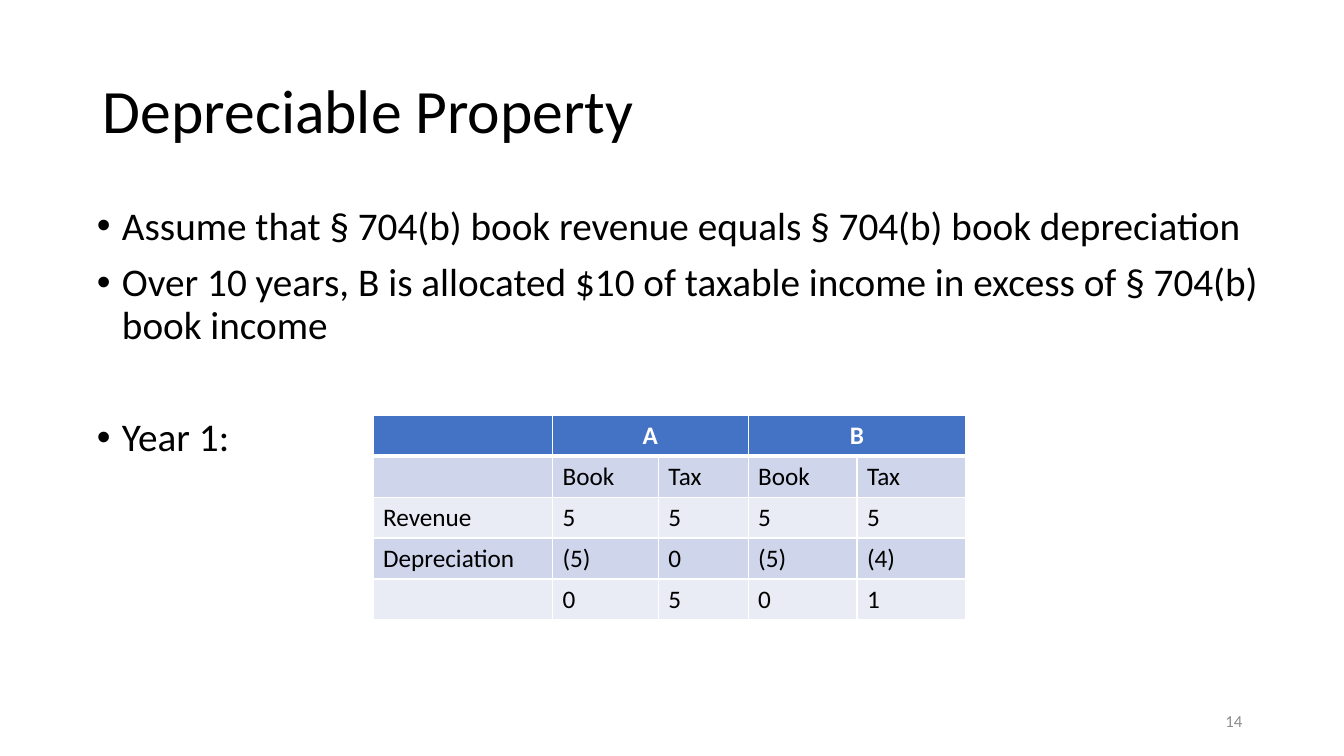
from lxml import etree
from pptx import Presentation
from pptx.dml.color import RGBColor
from pptx.enum.text import MSO_ANCHOR, MSO_AUTO_SIZE, PP_ALIGN
from pptx.oxml.ns import qn
from pptx.util import Pt

LEFT, CENTER, RIGHT = PP_ALIGN.LEFT, PP_ALIGN.CENTER, PP_ALIGN.RIGHT
MIDDLE, TOP = MSO_ANCHOR.MIDDLE, MSO_ANCHOR.TOP
NO_FIT = MSO_AUTO_SIZE.NONE
EMU_PER_PX = 9144

THEME = {
    "font": "Calibri",
    "ink": "000000", "muted": "8C8C8C", "white": "FFFFFF",
    "header": "4472C4", "bands": ("CFD5EA", "E9EBF5"),
    "title": 44, "body": 28, "table": 18, "number": 12,
    "rule": 1, "header_rule": 3,
}


def px(*lengths):
    return [length * EMU_PER_PX for length in lengths]


def write(paragraph, text, size, color, bold=False, **layout):
    run = paragraph.add_run()
    run.text = text
    run.font.color.rgb = RGBColor.from_string(color)
    font_format = {"name": THEME["font"], "size": Pt(size), "bold": bold}
    for target, values in ((run.font, font_format), (paragraph, layout)):
        for attribute, value in values.items():
            setattr(target, attribute, value)


prs = Presentation()
prs.slide_width, prs.slide_height = px(1333, 750)
slide = prs.slides.add_slide(prs.slide_layouts[1])

heading, points = slide.placeholders
page_number = slide.shapes.add_textbox(*px(942, 695, 300, 40))
for area, bounds, anchor in (
    (heading, (92, 40, 1150, 145), MIDDLE),
    (points, (86, 200, 1183, 476), TOP),
    (page_number, (942, 695, 300, 40), MIDDLE),
):
    area.left, area.top, area.width, area.height = px(*bounds)
    frame_format = {"word_wrap": True, "auto_size": NO_FIT, "vertical_anchor": anchor}
    for attribute, value in frame_format.items():
        setattr(area.text_frame, attribute, value)

write(heading.text_frame.paragraphs[0], "Depreciable Property", THEME["title"],
      THEME["ink"], alignment=LEFT, line_spacing=0.9)
write(page_number.text_frame.paragraphs[0], "14", THEME["number"],
      THEME["muted"], alignment=RIGHT)

BULLETS = (
    ("Assume that § 704(b) book revenue equals § 704(b) book depreciation", 10),
    ("Over 10 years, B is allocated $10 of taxable income in excess of § 704(b) book income", 10),
    ("Year 1:", 50),
)
indent, = px(25)
for index, (point, gap) in enumerate(BULLETS):
    paragraph = points.text_frame.add_paragraph() if index else points.text_frame.paragraphs[0]
    write(paragraph, point, THEME["body"], THEME["ink"], alignment=LEFT,
          line_spacing=0.9, space_before=Pt(gap), space_after=Pt(0))
    properties = paragraph._p.get_or_add_pPr()
    properties.set("marL", str(indent))
    properties.set("indent", str(-indent))
    etree.SubElement(properties, qn("a:buFont"), typeface="Arial")
    etree.SubElement(properties, qn("a:buChar"), char="•")

ALLOCATIONS = (
    ("", "A", "", "B", ""),
    ("", "Book", "Tax", "Book", "Tax"),
    ("Revenue", "5", "5", "5", "5"),
    ("Depreciation", "(5)", "0", "(5)", "(4)"),
    ("", "0", "5", "0", "1"),
)
COLUMN_WIDTHS = (178, 105, 89, 108, 108)
allocations = slide.shapes.add_table(
    len(ALLOCATIONS), len(COLUMN_WIDTHS), *px(370, 412, sum(COLUMN_WIDTHS), 203)).table
for column, width in zip(allocations.columns, px(*COLUMN_WIDTHS)):
    column.width = width
for first in (1, 3):
    allocations.cell(0, first).merge(allocations.cell(0, first + 1))

for row, entries in enumerate(ALLOCATIONS):
    is_header = row == 0
    fill = THEME["header"] if is_header else THEME["bands"][(row - 1) % 2]
    for column, entry in enumerate(entries):
        cell = allocations.cell(row, column)
        cell_properties = cell._tc.get_or_add_tcPr()
        for side in ("L", "R", "T", "B"):
            under_header = (row, side) in ((0, "B"), (1, "T"))
            weight = THEME["header_rule" if under_header else "rule"]
            border = etree.SubElement(cell_properties, qn("a:ln" + side), w=str(Pt(weight)))
            paint = etree.SubElement(border, qn("a:solidFill"))
            etree.SubElement(paint, qn("a:srgbClr"), val=THEME["white"])
        cell.fill.solid()
        cell.fill.fore_color.rgb = RGBColor.from_string(fill)
        if entry:
            write(cell.text_frame.paragraphs[0], entry, THEME["table"],
                  THEME["white" if is_header else "ink"], bold=is_header,
                  alignment=CENTER if is_header else LEFT)

prs.save("out.pptx")
